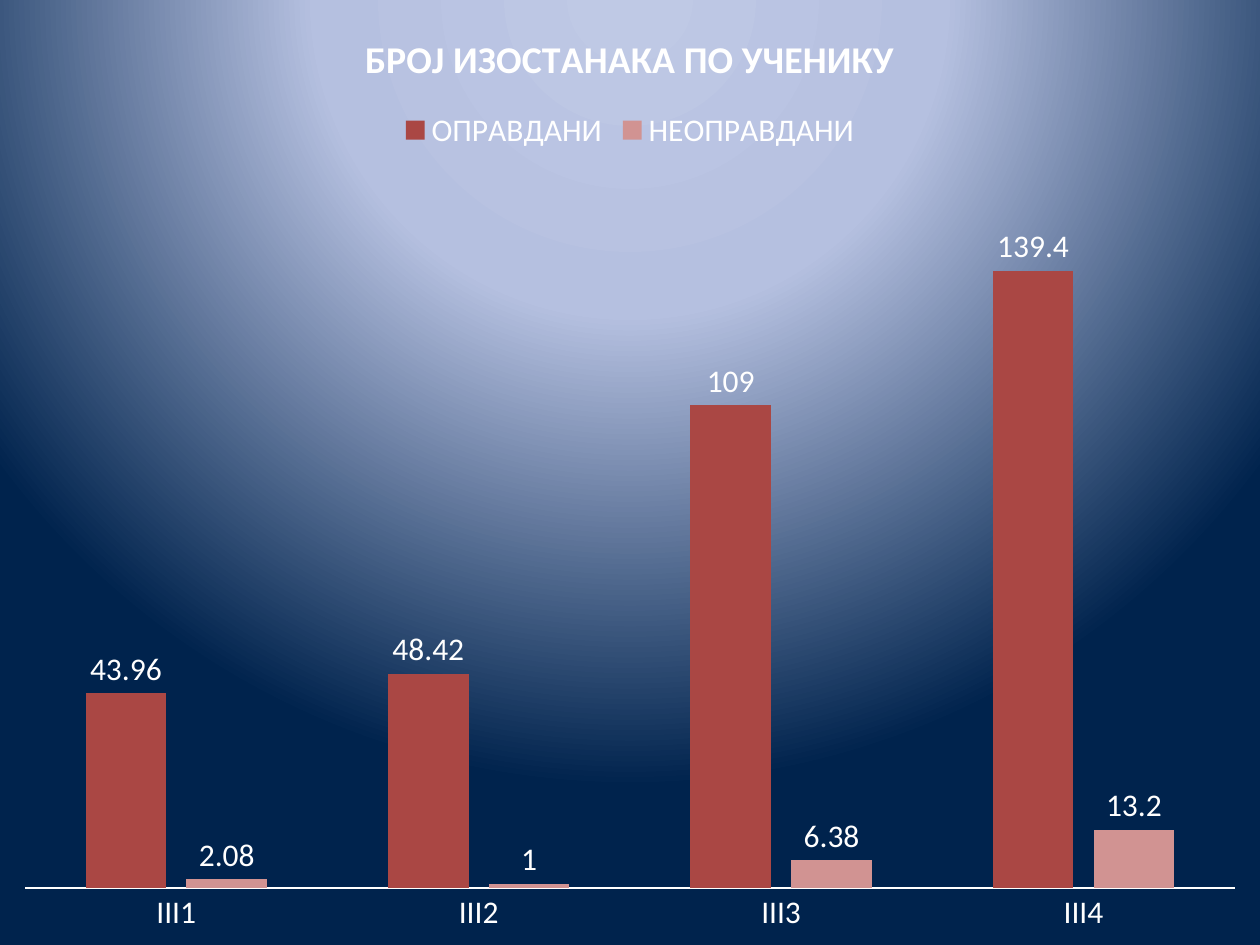
from dataclasses import dataclass

import lxml.etree
import pptx
import pptx.chart.data
import pptx.dml.color
import pptx.enum.chart
import pptx.oxml
import pptx.oxml.ns
import pptx.util
from pptx.util import Inches

RGB = pptx.dml.color.RGBColor.from_string


@dataclass(frozen=True)
class Theme:
    font: str = "Calibri"
    text: str = "FFFFFF"
    body_size: float = 18
    title_size: float = 21.6
    axis_width: float = 1.5
    glow: tuple = ((0, "BFC9E5"), (40, "B5C0E0"), (100, "00234D"))


@dataclass(frozen=True)
class AbsenceSeries:
    name: str
    values: tuple
    color: str


THEME = Theme()
CLASSES = ("III1", "III2", "III3", "III4")
ABSENCES = (
    AbsenceSeries("ОПРАВДАНИ", (43.96, 48.42, 109, 139.4), "AA4744"),
    AbsenceSeries("НЕОПРАВДАНИ", (2.08, 1, 6.38, 13.2), "D19392"),
)


def paint_background(slide) -> None:
    """Fill the slide with a circular glow centred above its top edge."""
    stops = "".join(
        f'<a:gs pos="{position * 1000}"><a:srgbClr val="{color}"/></a:gs>'
        for position, color in THEME.glow
    )
    glow = pptx.oxml.parse_xml(
        f'<a:gradFill {pptx.oxml.ns.nsdecls("a")} rotWithShape="1">'
        f'<a:gsLst>{stops}</a:gsLst><a:path path="circle">'
        '<a:fillToRect l="50000" t="-80000" r="50000" b="180000"/>'
        "</a:path></a:gradFill>"
    )
    slide.background.fill.gradient()
    plain = slide.element.find(".//" + pptx.oxml.ns.qn("a:gradFill"))
    plain.getparent().replace(plain, glow)


def style_font(font, size: float, bold: bool = False) -> None:
    font.name = THEME.font
    font.size = pptx.util.Pt(size)
    font.bold = bold
    font.color.rgb = RGB(THEME.text)


def place_plot(chart, left: float, top: float, width: float, height: float) -> None:
    """Set the inner plot area as fractions of the chart."""
    plot_area = chart.element.find(".//" + pptx.oxml.ns.qn("c:plotArea"))
    old = plot_area.find(pptx.oxml.ns.qn("c:layout"))
    if old is not None:
        plot_area.remove(old)
    sizes = "".join(
        f'<c:{tag} val="{value}"/>'
        for tag, value in zip("xywh", (left, top, width, height))
    )
    plot_area.insert(0, pptx.oxml.parse_xml(
        f'<c:layout {pptx.oxml.ns.nsdecls("c")}><c:manualLayout>'
        '<c:layoutTarget val="inner"/><c:xMode val="edge"/><c:yMode val="edge"/>'
        f"{sizes}</c:manualLayout></c:layout>"
    ))


def add_absence_chart(slide, width: int, height: int) -> None:
    data = pptx.chart.data.CategoryChartData()
    data.categories = CLASSES
    for series in ABSENCES:
        data.add_series(series.name, series.values)
    chart = slide.shapes.add_chart(
        pptx.enum.chart.XL_CHART_TYPE.COLUMN_CLUSTERED, 0, 0, width, height, data
    ).chart
    style_font(chart.font, THEME.body_size)

    # Title and legend
    chart.has_title = True
    heading = chart.chart_title.text_frame.paragraphs[0].add_run()
    heading.text = "БРОЈ ИЗОСТАНАКА ПО УЧЕНИКУ"
    style_font(heading.font, THEME.title_size, bold=True)
    chart.has_legend = True
    chart.legend.position = pptx.enum.chart.XL_LEGEND_POSITION.TOP
    chart.legend.include_in_layout = False

    # Axes
    no_ticks = pptx.enum.chart.XL_TICK_MARK.NONE
    classes_axis = chart.category_axis
    classes_axis.major_tick_mark = no_ticks
    classes_axis.minor_tick_mark = no_ticks
    classes_axis.format.line.color.rgb = RGB(THEME.text)
    classes_axis.format.line.width = pptx.util.Pt(THEME.axis_width)
    count_axis = chart.value_axis
    count_axis.visible = False
    count_axis.has_major_gridlines = False
    count_axis.minimum_scale = 0
    count_axis.maximum_scale = 160

    # Columns and their values
    plot = chart.plots[0]
    plot.vary_by_categories = False
    plot.gap_width = 150
    plot.overlap = -25
    for columns, series in zip(plot.series, ABSENCES):
        columns.format.fill.solid()
        columns.format.fill.fore_color.rgb = RGB(series.color)
        labels = columns.data_labels
        labels.show_value = True
        labels.position = pptx.enum.chart.XL_LABEL_POSITION.OUTSIDE_END
        style_font(labels.font, THEME.body_size)
    place_plot(chart, 0.02, 0.19, 0.96, 0.75)


def main() -> None:
    deck = pptx.Presentation()
    deck.slide_width, deck.slide_height = Inches(10), Inches(7.5)
    slide = deck.slides.add_slide(deck.slide_layouts[6])
    paint_background(slide)
    add_absence_chart(slide, deck.slide_width, deck.slide_height)
    deck.save("out.pptx")


if __name__ == "__main__":
    main()
